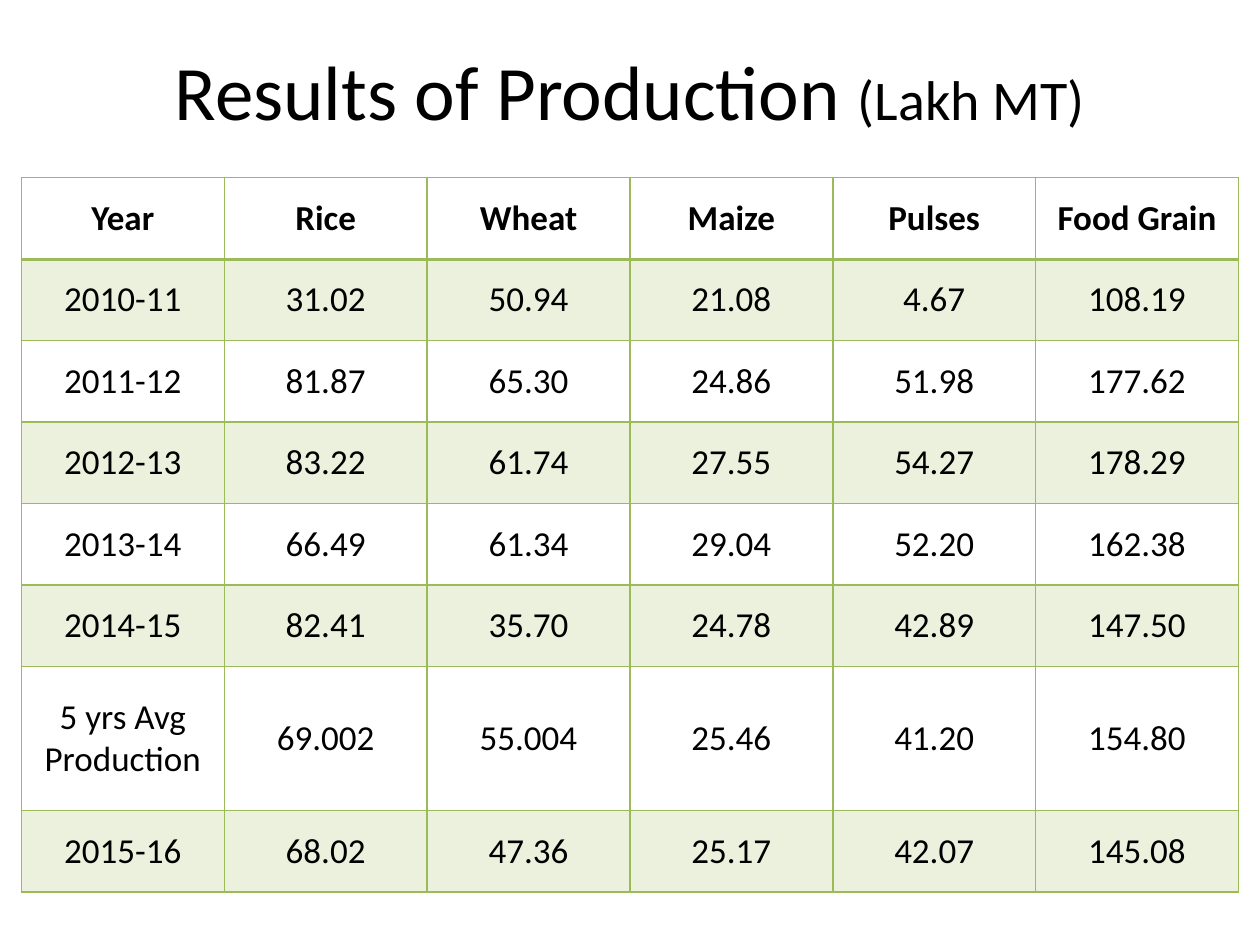
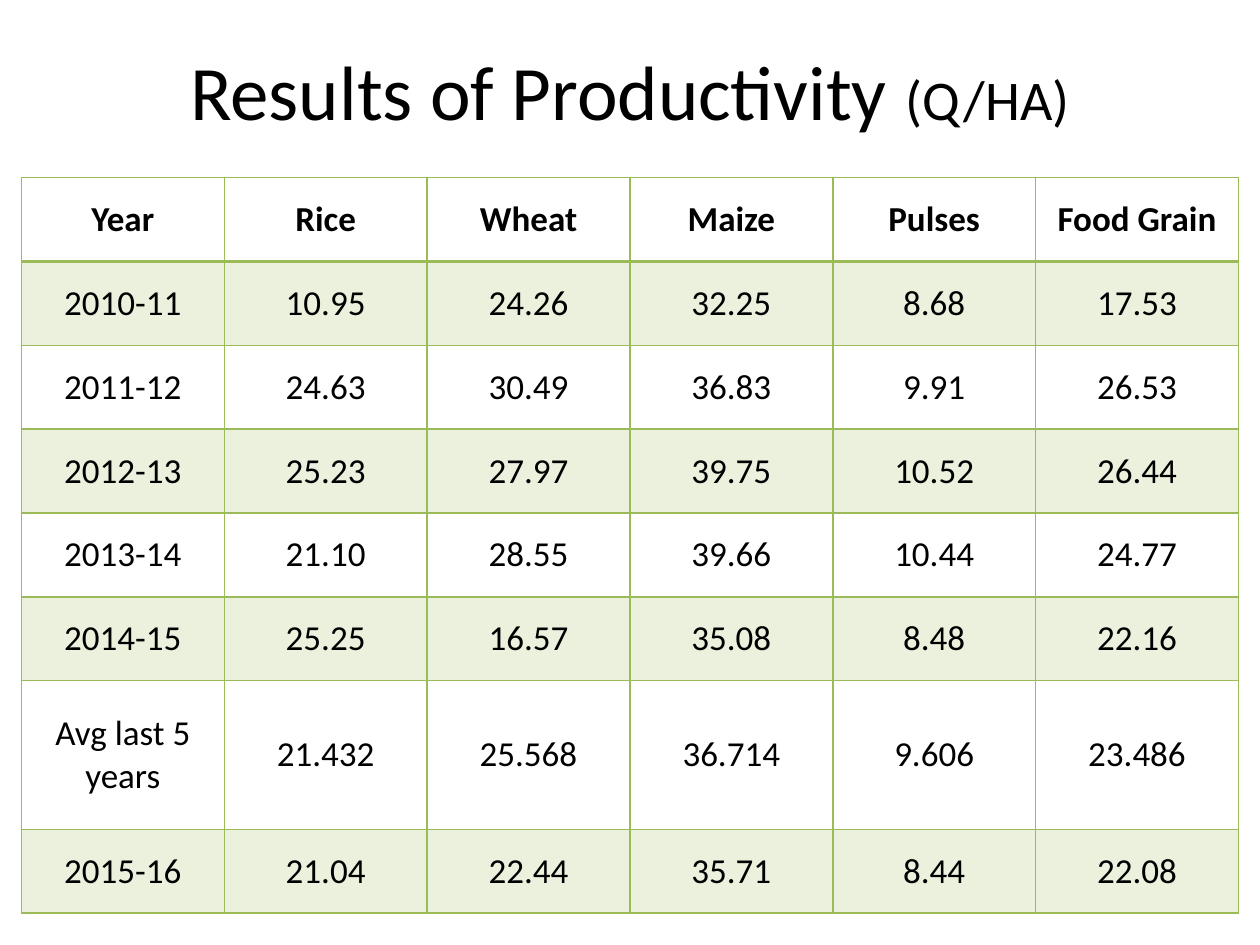
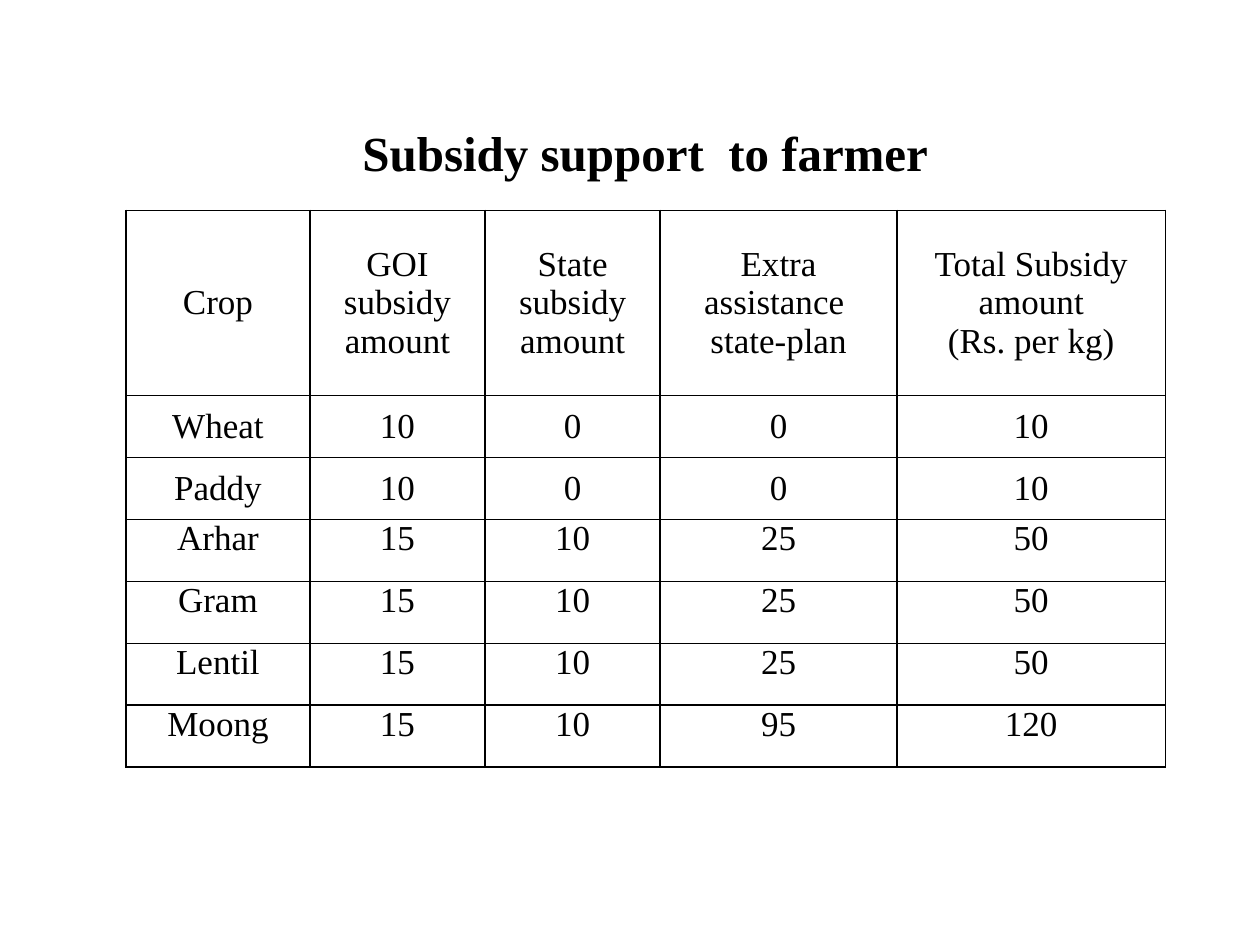
from lxml.etree import SubElement
from pptx import Presentation
from pptx.dml.color import RGBColor
from pptx.enum.text import MSO_ANCHOR, MSO_AUTO_SIZE, PP_ALIGN
from pptx.oxml import parse_xml
from pptx.oxml.ns import nsdecls, qn
from pptx.util import Inches, Pt

BLACK = "000000"
GREEN = "9BBB59"
SANS = "Calibri"
SERIF = "Times New Roman"
CELL_SIZE = 20
BAND_OPACITY = 20

RESULT_LEFT, RESULT_TOP, RESULT_WIDTH = 0.17, 1.41, 9.66
RESULT_TITLE_BOX = (0.5, 0.17, 9, 1.08)
RESULT_HEADER = ["Year", "Rice", "Wheat", "Maize", "Pulses", "Food Grain"]
AVERAGE_ROW = 6

PRODUCTION = [
    ["2010-11", "31.02", "50.94", "21.08", "4.67", "108.19"],
    ["2011-12", "81.87", "65.30", "24.86", "51.98", "177.62"],
    ["2012-13", "83.22", "61.74", "27.55", "54.27", "178.29"],
    ["2013-14", "66.49", "61.34", "29.04", "52.20", "162.38"],
    ["2014-15", "82.41", "35.70", "24.78", "42.89", "147.50"],
    ["5 yrs Avg Production", "69.002", "55.004", "25.46", "41.20", "154.80"],
    ["2015-16", "68.02", "47.36", "25.17", "42.07", "145.08"],
]
PRODUCTIVITY = [
    ["2010-11", "10.95", "24.26", "32.25", "8.68", "17.53"],
    ["2011-12", "24.63", "30.49", "36.83", "9.91", "26.53"],
    ["2012-13", "25.23", "27.97", "39.75", "10.52", "26.44"],
    ["2013-14", "21.10", "28.55", "39.66", "10.44", "24.77"],
    ["2014-15", "25.25", "16.57", "35.08", "8.48", "22.16"],
    ["Avg last 5 years", "21.432", "25.568", "36.714", "9.606", "23.486"],
    ["2015-16", "21.04", "22.44", "35.71", "8.44", "22.08"],
]
SUBSIDY_COLUMNS = [1.46, 1.39, 1.39, 1.88, 2.13]
SUBSIDY = [
    ["Crop", "GOI subsidy amount", "State subsidy amount",
     "Extra\nassistance  state-plan", "Total Subsidy amount\n(Rs. per kg)"],
    ["Wheat", "10", "0", "0", "10"],
    ["Paddy", "10", "0", "0", "10"],
    ["Arhar", "15", "10", "25", "50"],
    ["Gram", "15", "10", "25", "50"],
    ["Lentil", "15", "10", "25", "50"],
    ["Moong", "15", "10", "95", "120"],
]


def color(hex_string):
    return RGBColor.from_string(hex_string)


def format_run(run, font_name, size, bold=False):
    run.font.name = font_name
    run.font.size = Pt(size)
    run.font.bold = bold
    run.font.color.rgb = color(BLACK)


def add_titled_slide(presentation, box, parts, font_name, bold=False):
    """Add a title-only slide; parts are (text, size) runs of its title."""
    slide = presentation.slides.add_slide(presentation.slide_layouts[5])
    title = slide.shapes.title
    title.left, title.top, title.width, title.height = map(Inches, box)
    text_frame = title.text_frame
    text_frame.auto_size = MSO_AUTO_SIZE.NONE
    text_frame.vertical_anchor = MSO_ANCHOR.MIDDLE
    paragraph = text_frame.paragraphs[0]
    paragraph.alignment = PP_ALIGN.CENTER
    for text, size in parts:
        run = paragraph.add_run()
        run.text = text
        format_run(run, font_name, size, bold)
    return slide


def set_borders(cell, hex_string, top=1, bottom=1):
    widths = {"L": 1, "R": 1, "T": top, "B": bottom}
    properties = cell._tc.get_or_add_tcPr()
    for position, (side, width) in enumerate(widths.items()):
        properties.insert(position, parse_xml(
            f'<a:ln{side} {nsdecls("a")} w="{Pt(width)}"><a:solidFill>'
            f'<a:srgbClr val="{hex_string}"/></a:solidFill></a:ln{side}>'))


def fill_band(cell):
    cell.fill.solid()
    cell.fill.fore_color.rgb = color(GREEN)
    for rgb in cell._tc.tcPr.iterfind(f"{qn('a:solidFill')}/{qn('a:srgbClr')}"):
        SubElement(rgb, qn("a:alpha"), val=str(BAND_OPACITY * 1000))


def format_cell(cell, text, font_name, margins, bold=False):
    cell.text_frame.text = text
    cell.margin_left = cell.margin_right = Inches(margins[0])
    cell.margin_top = cell.margin_bottom = Inches(margins[1])
    cell.vertical_anchor = MSO_ANCHOR.MIDDLE
    cell.fill.background()
    for paragraph in cell.text_frame.paragraphs:
        paragraph.alignment = PP_ALIGN.CENTER
        for run in paragraph.runs:
            format_run(run, font_name, CELL_SIZE, bold)


def add_grid(slide, left, top, height, columns, row_count, tall_row, tall_height):
    """Add a plain table whose rows are equal except for one tall row."""
    table = slide.shapes.add_table(
        row_count, len(columns), Inches(left), Inches(top),
        Inches(sum(columns)), Inches(height)).table
    table.first_row = table.horz_banding = False
    for column, width in zip(table.columns, columns):
        column.width = Inches(width)
    row_height = (height - tall_height) / (row_count - 1)
    for index, row in enumerate(table.rows):
        row.height = Inches(tall_height if index == tall_row else row_height)
    return table


def add_result_slide(presentation, heading, unit, records, height, average_height):
    slide = add_titled_slide(
        presentation, RESULT_TITLE_BOX, [(heading + " ", 44), (unit, 32)], SANS)
    rows = [RESULT_HEADER] + records
    columns = [RESULT_WIDTH / len(RESULT_HEADER)] * len(RESULT_HEADER)
    table = add_grid(slide, RESULT_LEFT, RESULT_TOP, height, columns,
                     len(rows), AVERAGE_ROW, average_height)
    for row_index, row in enumerate(rows):
        for column_index, text in enumerate(row):
            cell = table.cell(row_index, column_index)
            format_cell(cell, text, SANS, (0.1, 0.05), bold=row_index == 0)
            if row_index % 2:
                fill_band(cell)
            set_borders(cell, GREEN, top=2 if row_index == 1 else 1,
                        bottom=2 if row_index == 0 else 1)


def add_subsidy_slide(presentation):
    slide = add_titled_slide(presentation, (2.75, 0.92, 4.74, 0.57),
                             [("Subsidy support  to farmer", 28)], SERIF, bold=True)
    slide.shapes.title.text_frame.word_wrap = False
    table = add_grid(slide, 1, 1.67, 4.42, SUBSIDY_COLUMNS, len(SUBSIDY), 0, 1.47)
    first_pulse_row = 3
    for row_index, row in enumerate(SUBSIDY):
        for column_index, text in enumerate(row):
            cell = table.cell(row_index, column_index)
            format_cell(cell, text, SERIF, (0.07, 0))
            if row_index >= first_pulse_row:
                cell.vertical_anchor = MSO_ANCHOR.TOP
            set_borders(cell, BLACK)


def main():
    presentation = Presentation()
    presentation.slide_width = Inches(10)
    presentation.slide_height = Inches(7.5)
    add_result_slide(presentation, "Results of Production", "(Lakh MT)",
                     PRODUCTION, 5.67, 1.14)
    add_result_slide(presentation, "Results of Productivity", "(Q/HA)",
                     PRODUCTIVITY, 5.84, 1.18)
    add_subsidy_slide(presentation)
    presentation.save("out.pptx")


if __name__ == "__main__":
    main()
